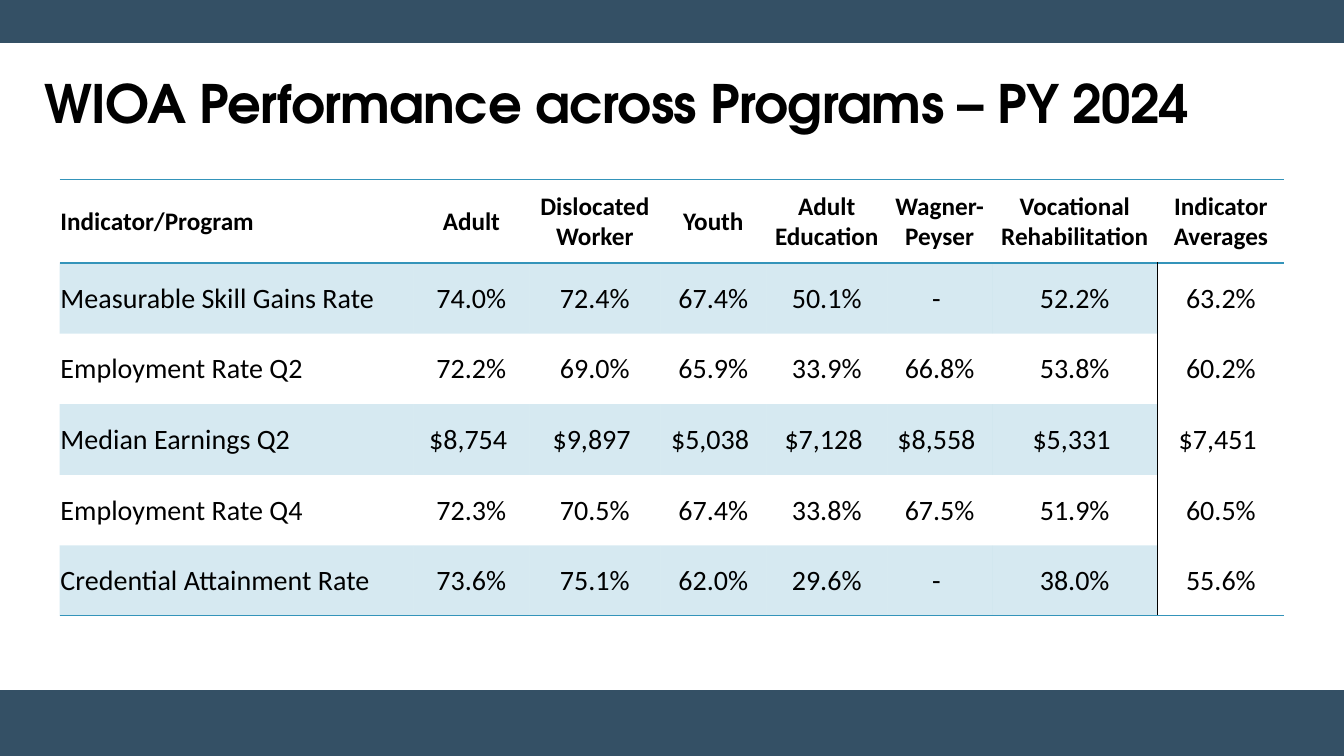
from lxml.etree import SubElement
from pptx import Presentation
from pptx.dml.color import RGBColor
from pptx.enum.shapes import MSO_SHAPE
from pptx.enum.text import MSO_ANCHOR, MSO_AUTO_SIZE, PP_ALIGN
from pptx.oxml.ns import qn
from pptx.util import Inches, Pt

NAVY = RGBColor(0x34, 0x50, 0x65)
TEAL = RGBColor(0x34, 0x94, 0xBA)
BLACK = RGBColor(0, 0, 0)
SLIDE_WIDTH, SLIDE_HEIGHT = 13.33, 7.5
NO_STYLE_NO_GRID = "{2D5ABB26-0587-4C30-8999-92F81FD0307C}"
COLUMN_WIDTHS = (3.51, 1.15, 1.3, 1.05, 1.2, 1.04, 1.64, 1.26)
HEADER_HEIGHT, ROW_HEIGHT = 0.83, 0.7
PERFORMANCE = (
    ("Indicator/Program", "Adult", "Dislocated Worker", "Youth", "Adult Education",
     "Wagner-Peyser", "Vocational Rehabilitation", "Indicator Averages"),
    ("Measurable Skill Gains Rate", "74.0%", "72.4%", "67.4%", "50.1%", "- ", "52.2%", "63.2%"),
    ("Employment Rate Q2", "72.2%", "69.0%", "65.9%", "33.9%", "66.8%", "53.8%", "60.2%"),
    ("Median Earnings Q2", "$8,754 ", "$9,897 ", "$5,038 ", "$7,128 ", "$8,558 ", "$5,331 ", "$7,451 "),
    ("Employment Rate Q4", "72.3%", "70.5%", "67.4%", "33.8%", "67.5%", "51.9%", "60.5%"),
    ("Credential Attainment Rate", "73.6%", "75.1%", "62.0%", "29.6%", "- ", "38.0%", "55.6%"),
)


def add_band(slide, top, height):
    """Draw a full-width navy band."""
    band = slide.shapes.add_shape(
        MSO_SHAPE.RECTANGLE, 0, Inches(top), Inches(SLIDE_WIDTH), Inches(height))
    band.shadow.inherit = False
    band.fill.solid()
    band.fill.fore_color.rgb = NAVY
    band.line.color.rgb = NAVY
    band.line.width = Pt(1)


def set_title(slide, text, left, top, width, height):
    """Place and format the slide title in the given box."""
    title = slide.shapes.title
    title.left, title.top = Inches(left), Inches(top)
    title.width, title.height = Inches(width), Inches(height)
    frame = title.text_frame
    frame.text = text
    frame.word_wrap = True
    frame.auto_size = MSO_AUTO_SIZE.NONE
    frame.vertical_anchor = MSO_ANCHOR.BOTTOM
    frame.margin_bottom = Inches(0.02)
    paragraph = frame.paragraphs[0]
    paragraph.alignment = PP_ALIGN.LEFT
    paragraph.line_spacing = 0.9
    run = paragraph.runs[0]
    format_run(run, "TeX Gyre Adventor", 37.8, True)
    run.font._element.set("spc", "-50")


def format_run(run, typeface, size, bold):
    """Give a run its typeface, size and weight in black."""
    run.font.name = typeface
    run.font.size = Pt(size)
    run.font.bold = bold
    run.font.color.rgb = BLACK


def add_border(cell, side, color):
    """Add a one-point border to one side of a cell."""
    line = SubElement(cell._tc.get_or_add_tcPr(), qn(f"a:ln{side}"), w=str(Pt(1)))
    fill = SubElement(line, qn("a:solidFill"))
    SubElement(fill, qn("a:srgbClr"), val=str(color))


def fill_cell(cell, shaded):
    """Shade a cell in translucent teal or leave it clear."""
    if not shaded:
        cell.fill.background()
        return
    cell.fill.solid()
    cell.fill.fore_color.rgb = TEAL
    color = cell._tc.tcPr.find(qn("a:solidFill")).find(qn("a:srgbClr"))
    SubElement(color, qn("a:alpha"), val="20000")


def format_cell(cell, text, row, column):
    """Write one cell and style it by its place in the table."""
    is_header = row == 0
    average_column = len(COLUMN_WIDTHS) - 1
    cell.text_frame.text = text
    cell.vertical_anchor = MSO_ANCHOR.MIDDLE
    cell.margin_left = cell.margin_right = cell.margin_top = Inches(0.01)
    cell.margin_bottom = 0
    paragraph = cell.text_frame.paragraphs[0]
    paragraph.alignment = PP_ALIGN.CENTER if column else PP_ALIGN.LEFT
    format_run(paragraph.runs[0], "Calibri", 18 if is_header else 20, is_header)
    if not is_header and column == average_column:
        add_border(cell, "L", BLACK)
    if not is_header and column == average_column - 1:
        add_border(cell, "R", BLACK)
    if is_header:
        add_border(cell, "T", TEAL)
    if row in (0, len(PERFORMANCE) - 1):
        add_border(cell, "B", TEAL)
    fill_cell(cell, row % 2 == 1 and column < average_column)


def add_performance_table(slide, left, top):
    """Build the indicator table from its top left corner."""
    height = HEADER_HEIGHT + ROW_HEIGHT * (len(PERFORMANCE) - 1)
    table = slide.shapes.add_table(
        len(PERFORMANCE), len(COLUMN_WIDTHS), Inches(left), Inches(top),
        Inches(sum(COLUMN_WIDTHS)), Inches(height)).table
    table.first_row = table.horz_banding = False
    table._tbl.tblPr.find(qn("a:tableStyleId")).text = NO_STYLE_NO_GRID
    for column, width in zip(table.columns, COLUMN_WIDTHS):
        column.width = Inches(width)
    for row, values in enumerate(PERFORMANCE):
        table.rows[row].height = Inches(ROW_HEIGHT if row else HEADER_HEIGHT)
        for column, text in enumerate(values):
            format_cell(table.cell(row, column), text, row, column)


def main():
    """Create the presentation and save it."""
    presentation = Presentation()
    presentation.slide_width = Inches(SLIDE_WIDTH)
    presentation.slide_height = Inches(SLIDE_HEIGHT)
    slide = presentation.slides.add_slide(presentation.slide_layouts[5])
    add_band(slide, 6.85, 0.65)
    add_band(slide, 0, 0.42)
    set_title(slide, "WIOA Performance across Programs – PY 2024", 0.34, 0.04, 12.2, 1.32)
    add_performance_table(slide, 0.59, 1.78)
    presentation.save("out.pptx")


if __name__ == "__main__":
    main()
